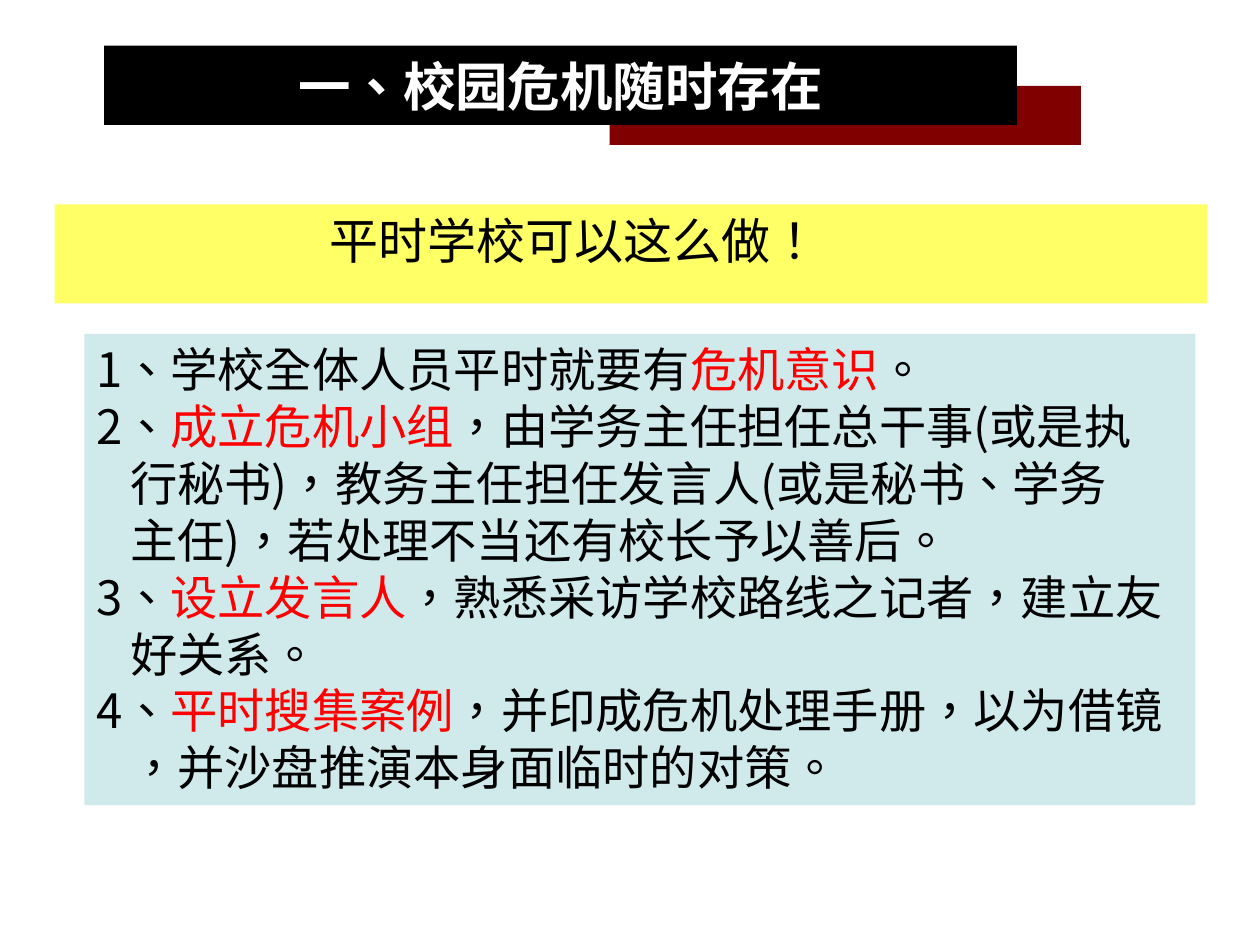
from lxml import etree
from pptx import Presentation, util as u
from pptx.dml.color import RGBColor
from pptx.enum import lang, shapes, text
from pptx.oxml.ns import qn

BLACK = RGBColor(0x00, 0x00, 0x00)
WHITE = RGBColor(0xFF, 0xFF, 0xFF)
MAROON = RGBColor(0x80, 0x00, 0x00)
YELLOW = RGBColor(0xFF, 0xFF, 0x66)
PALE_BLUE = RGBColor(0xD0, 0xEA, 0xEC)
RED = RGBColor(0xFF, 0x00, 0x00)
CJK_FONT = "Noto Sans CJK SC"

# Each measure is a list of lines; each line is a list of (wording, colour)
MEASURES = [
    [[("1、学校全体人员平时就要有", BLACK), ("危机意识", RED), ("。", BLACK)]],
    [[("2、", BLACK), ("成立危机小组", RED), ("，由学务主任担任总干事(或是执", BLACK)],
     [("行秘书)，教务主任担任发言人(或是秘书、学务", BLACK)],
     [("主任)，若处理不当还有校长予以善后。", BLACK)]],
    [[("3、", BLACK), ("设立发言人", RED), ("，熟悉采访学校路线之记者，建立友", BLACK)],
     [("好关系。", BLACK)]],
    [[("4、", BLACK), ("平时搜集案例", RED), ("，并印成危机处理手册，以为借镜", BLACK)],
     [("，并沙盘推演本身面临时的对策。", BLACK)]],
]


def place(shape, box):
    shape.left, shape.top, shape.width, shape.height = (u.Cm(v) for v in box)


def paint(shape, colour):
    shape.fill.solid()
    shape.fill.fore_color.rgb = colour
    shape.line.fill.background()


def add_bar(slide, box, colour):
    bar = slide.shapes.add_shape(shapes.MSO_SHAPE.RECTANGLE, *(u.Cm(v) for v in box))
    bar.shadow.inherit = False
    paint(bar, colour)
    return bar


def add_run(paragraph, wording, size, colour, face=CJK_FONT, bold=False):
    run = paragraph.add_run()
    run.text = wording
    font = run.font
    font.size, font.bold, font.name = u.Pt(size), bold, face
    font.color.rgb = colour
    font.language_id = lang.MSO_LANGUAGE_ID.TRADITIONAL_CHINESE
    east_asian = etree.SubElement(font._element, qn("a:ea"))
    east_asian.set("typeface", face)


def set_indent(paragraph, left, first=0.0):
    properties = paragraph._p.get_or_add_pPr()
    properties.set("marL", str(u.Cm(left)))
    properties.set("indent", str(u.Cm(first)))
    etree.SubElement(properties, qn("a:buNone"))


def heading(slide, box):
    left, top, width, height = box
    # Maroon bar lies behind the title, offset to the lower right
    accent = add_bar(slide, (left + 10.19, top + 0.81, 9.5, 1.19), MAROON)
    slide.shapes._spTree.insert(2, accent._element)

    title = slide.shapes.title
    place(title, box)
    paint(title, BLACK)
    frame = title.text_frame
    frame.auto_size = text.MSO_AUTO_SIZE.NONE
    frame.vertical_anchor = text.MSO_ANCHOR.MIDDLE
    paragraph = frame.paragraphs[0]
    paragraph.alignment = text.PP_ALIGN.CENTER
    add_run(paragraph, "一、校园危机随时存在", 30, WHITE, bold=True)


def lead_banner(slide, box):
    banner = add_bar(slide, box, YELLOW)
    frame = banner.text_frame
    frame.word_wrap = True
    frame.vertical_anchor = text.MSO_ANCHOR.TOP
    paragraph = frame.paragraphs[0]
    paragraph.alignment = text.PP_ALIGN.LEFT
    set_indent(paragraph, 5.3)
    add_run(paragraph, "平时学校可以这么做！", 28, BLACK, face="Arial")


def measure_list(slide, box):
    body = slide.placeholders[1]
    place(body, box)
    paint(body, PALE_BLUE)
    frame = body.text_frame
    frame.auto_size = text.MSO_AUTO_SIZE.NONE
    frame.vertical_anchor = text.MSO_ANCHOR.TOP
    for number, lines in enumerate(MEASURES):
        paragraph = frame.add_paragraph() if number else frame.paragraphs[0]
        set_indent(paragraph, 0.67, -0.67)
        paragraph.space_before = u.Pt(0)
        paragraph.line_spacing = u.Pt(32.5)
        for row, line in enumerate(lines):
            if row:
                paragraph.add_line_break()
            for wording, colour in line:
                add_run(paragraph, wording, 27, colour)


def main():
    deck = Presentation()
    deck.slide_width, deck.slide_height = u.Cm(25.4), u.Cm(19.05)
    slide = deck.slides.add_slide(deck.slide_layouts[1])
    heading(slide, (2.1, 0.92, 18.4, 1.6))
    lead_banner(slide, (1.1, 4.12, 23.24, 2.0))
    measure_list(slide, (1.7, 6.73, 22.4, 9.5))
    deck.save("out.pptx")


if __name__ == "__main__":
    main()
